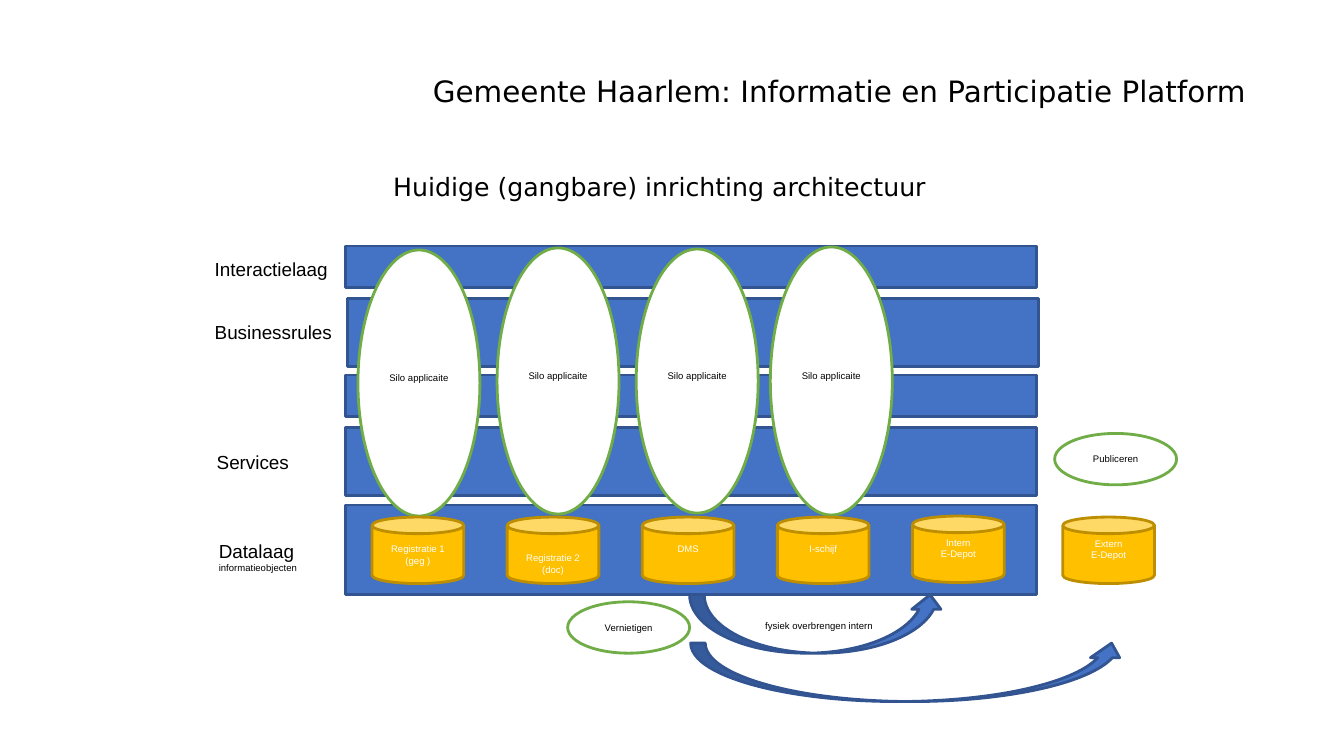
from pptx import Presentation
from pptx.dml.color import RGBColor
from pptx.enum.shapes import MSO_SHAPE as Shape
from pptx.enum.text import MSO_ANCHOR as Anchor, PP_ALIGN as Align
from pptx.util import Inches, Pt

BLACK = RGBColor(0x00, 0x00, 0x00)
WHITE = RGBColor(0xFF, 0xFF, 0xFF)
BLUE = RGBColor(0x44, 0x72, 0xC4)
DARK_BLUE = RGBColor(0x32, 0x54, 0x91)
GREEN = RGBColor(0x70, 0xAD, 0x47)
GOLD = RGBColor(0xFF, 0xC0, 0x00)
DARK_GOLD = RGBColor(0xBD, 0x8E, 0x00)
SMALL, LARGE = 6.8, 13.5


class ArchitectureSlide:
    """Draws the parts of the architecture in one style on one slide."""

    def __init__(self, slide):
        self.shapes = slide.shapes

    def fill_text(self, frame, lines, color, align, insets):
        frame.word_wrap = True
        frame.margin_left, frame.margin_top, frame.margin_right, frame.margin_bottom = map(Inches, insets)
        for index, (words, size, font) in enumerate(lines):
            paragraph = frame.add_paragraph() if index else frame.paragraphs[0]
            paragraph.alignment = align
            run = paragraph.add_run()
            run.text = words
            run.font.size = Pt(size)
            run.font.name = font
            run.font.color.rgb = color

    def figure(self, kind, box, fill, outline):
        figure = self.shapes.add_shape(kind, *map(Inches, box))
        figure.shadow.inherit = False
        figure.fill.solid()
        figure.fill.fore_color.rgb = fill
        figure.line.color.rgb = outline
        figure.line.width = Pt(2)
        return figure

    def band(self, left, top, height):
        self.figure(Shape.RECTANGLE, (left, top, 6.85, height), BLUE, DARK_BLUE)

    def arrow(self, left, top, width):
        self.figure(Shape.CURVED_UP_ARROW, (left, top, width, 0.58), BLUE, DARK_BLUE)

    def ellipse(self, words, left, top, height, bottom=0.04):
        ellipse = self.figure(Shape.OVAL, (left, top, 1.21, height), WHITE, GREEN)
        ellipse.text_frame.vertical_anchor = Anchor.MIDDLE
        self.fill_text(ellipse.text_frame, [(words, SMALL, "Arial")], BLACK,
                       Align.CENTER, (0.07, 0.04, 0.07, bottom))

    def store(self, lines, left, top, inset_top, inset_bottom):
        store = self.figure(Shape.CAN, (left, top, 0.91, 0.66), GOLD, DARK_GOLD)
        store.text_frame.vertical_anchor = Anchor.MIDDLE
        self.fill_text(store.text_frame, [(words, SMALL, "Arial") for words in lines], WHITE,
                       Align.CENTER, (0.07, inset_top, 0.07, inset_bottom))

    def label(self, box, *lines):
        label = self.shapes.add_textbox(*map(Inches, box))
        self.fill_text(label.text_frame, [(words, size, "Arial") for words, size in lines],
                       BLACK, Align.LEFT, (0.07, 0.04, 0.07, 0.04))

    def heading(self, words, box, size, align):
        heading = self.shapes.add_textbox(*map(Inches, box))
        self.fill_text(heading.text_frame, [(words, size, "DejaVu Sans")], BLACK, align, (0.05,) * 4)
        return heading


def main():
    deck = Presentation()
    deck.slide_width, deck.slide_height = Inches(13.33), Inches(7.5)
    page = ArchitectureSlide(deck.slides.add_slide(deck.slide_layouts[6]))

    title = page.heading("Gemeente Haarlem: Informatie en Participatie Platform",
                         (2.28, 0.7, 10.13, 0.45), 21, Align.RIGHT)
    title.text_frame.vertical_anchor = Anchor.MIDDLE
    title.text_frame.paragraphs[0].line_spacing = 0.9
    page.heading("Huidige (gangbare) inrichting architectuur",
                 (3.85, 1.65, 5.67, 0.4), 18, Align.LEFT)

    for left, top, height in [(3.43, 2.44, 0.41), (3.45, 2.96, 0.68), (3.43, 3.72, 0.41),
                              (3.43, 4.24, 0.68), (3.43, 5.01, 0.89)]:
        page.band(left, top, height)

    for layer, left, top in [("Interactielaag", 2.06, 2.52), ("Businessrules", 2.06, 3.14),
                             ("Services", 2.08, 4.43)]:
        page.label((left, top, 1.37, 0.3), (layer, LARGE))
    page.label((2.1, 5.31, 1.37, 0.41), ("Datalaag", LARGE), ("informatieobjecten", SMALL))

    page.ellipse("Vernietigen", 5.63, 5.97, 0.51)
    page.ellipse("Publiceren", 10.46, 4.3, 0.51)
    page.arrow(6.84, 5.9, 2.53)
    page.arrow(6.85, 6.38, 4.32)
    page.label((7.52, 6.11, 1.44, 0.19), ("fysiek overbrengen intern", SMALL))

    for left, top, height in [(3.55, 2.48, 2.64), (4.93, 2.46, 2.64),
                              (6.31, 2.47, 2.62), (7.64, 2.45, 2.66)]:
        page.ellipse("Silo applicaite", left, top, height, bottom=0.15)

    stores = [
        (["Registratie 1", "(geg )"], 5.13, 0.04, 0.04),
        (["Registratie 2", "(doc)"], 5.13, 0.18, 0),
        (["DMS"], 5.13, 0.04, 0.15),
        (["I-schijf"], 5.13, 0.04, 0.15),
        (["Intern", "E-Depot"], 5.12, 0.04, 0.15),
    ]
    for column, (lines, top, inset_top, inset_bottom) in enumerate(stores):
        page.store(lines, 3.69 + 1.34 * column, top, inset_top, inset_bottom)
    page.store(["Extern", "E-Depot"], 10.54, 5.13, 0.04, 0.15)

    deck.save("out.pptx")


if __name__ == "__main__":
    main()
